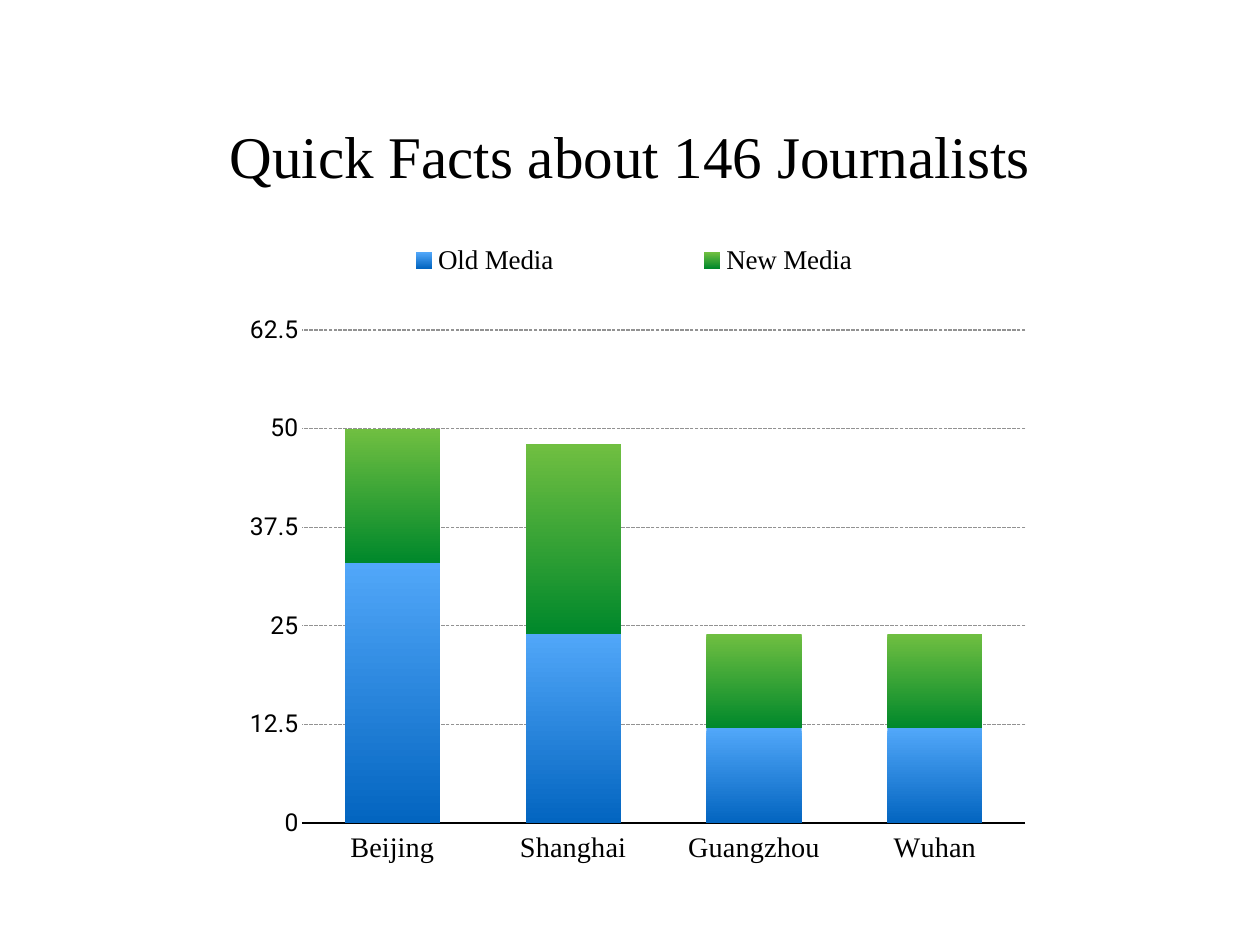
from dataclasses import dataclass

from lxml import etree
from pptx import Presentation
from pptx.chart.data import CategoryChartData
from pptx.dml.color import RGBColor
from pptx.enum.chart import XL_CHART_TYPE, XL_LEGEND_POSITION, XL_TICK_LABEL_POSITION, XL_TICK_MARK
from pptx.enum.dml import MSO_LINE
from pptx.enum.text import MSO_ANCHOR, PP_ALIGN
from pptx.oxml.ns import qn
from pptx.util import Cm, Pt

STACKED = XL_CHART_TYPE.COLUMN_STACKED
LEGEND_TOP = XL_LEGEND_POSITION.TOP
LABELS_LOW = XL_TICK_LABEL_POSITION.LOW
NO_TICK = XL_TICK_MARK.NONE
DOTTED = MSO_LINE.SQUARE_DOT
MIDDLE = MSO_ANCHOR.MIDDLE
CENTER = PP_ALIGN.CENTER


@dataclass(frozen=True)
class Theme:
    serif: str = "Times New Roman"
    sans: str = "Roboto"
    ink: str = "000000"
    grid: str = "929292"
    blue: tuple = ("51A7F9", "0365C0")
    green: tuple = ("70BF41", "00882B")
    title_size: int = 48
    category_size: int = 23
    legend_size: int = 22
    value_size: int = 20
    chart_size: int = 10


THEME = Theme()
CITIES = ("Beijing", "Shanghai", "Guangzhou", "Wuhan")
MEDIA = (
    ("Old Media", (33, 24, 12, 12), THEME.blue),
    ("New Media", (17, 24, 12, 12), THEME.green),
)


def set_font(font, name, size):
    font.name = name
    font.size = Pt(size)
    font.bold = False
    font.color.rgb = RGBColor.from_string(THEME.ink)


def set_line(line, color):
    line.color.rgb = RGBColor.from_string(color)
    line.width = Pt(1)


def set_gradient(fill, colors):
    fill.gradient()
    fill.gradient_angle = 270
    for stop, color, position in zip(fill.gradient_stops, colors, (0, 1)):
        stop.color.rgb = RGBColor.from_string(color)
        stop.position = position


def make_layout(x, y, w, h, inner=False):
    layout = etree.Element(qn("c:layout"))
    manual = etree.SubElement(layout, qn("c:manualLayout"))
    settings = [("layoutTarget", "inner")] if inner else []
    settings += [("xMode", "edge"), ("yMode", "edge")]
    settings += [("x", x), ("y", y), ("w", w), ("h", h)]
    for tag, value in settings:
        etree.SubElement(manual, qn(f"c:{tag}")).set("val", str(value))
    return layout


def place_chart_parts(chart):
    plot_area = chart.element.find(".//" + qn("c:plotArea"))
    for layout in plot_area.findall(qn("c:layout")):
        plot_area.remove(layout)
    plot_area.insert(0, make_layout(0.085, 0.144, 0.915, 0.773, inner=True))

    legend = chart.element.find(".//" + qn("c:legend"))
    for layout in legend.findall(qn("c:layout")):
        legend.remove(layout)
    legend.find(qn("c:legendPos")).addnext(make_layout(0.05, 0, 0.91, 0.07))


def add_title(page, text):
    box = page.shapes.add_textbox(Cm(2.64), Cm(1.24), Cm(30.84), Cm(6))
    frame = box.text_frame
    frame.word_wrap = True
    frame.vertical_anchor = MIDDLE
    frame.margin_left = frame.margin_right = 0
    frame.margin_top = frame.margin_bottom = 0
    para = frame.paragraphs[0]
    para.text = text
    para.alignment = CENTER
    para.line_spacing = 1.2
    set_font(para.font, THEME.serif, THEME.title_size)


def style_axes(chart):
    cities = chart.category_axis
    cities.tick_label_position = LABELS_LOW
    set_font(cities.tick_labels.font, THEME.serif, THEME.category_size)
    set_line(cities.format.line, THEME.ink)

    counts = chart.value_axis
    counts.minimum_scale = 0
    counts.maximum_scale = 62.5
    counts.major_unit = 12.5
    counts.has_major_gridlines = True
    gridlines = counts.major_gridlines.format.line
    set_line(gridlines, THEME.grid)
    gridlines.dash_style = DOTTED
    counts.tick_labels.number_format = "General"
    counts.tick_labels.number_format_is_linked = False
    set_font(counts.tick_labels.font, THEME.sans, THEME.value_size)
    counts.format.line.fill.background()

    for axis in (cities, counts):
        axis.major_tick_mark = NO_TICK
        axis.minor_tick_mark = NO_TICK


def add_media_chart(page):
    data = CategoryChartData()
    data.categories = CITIES
    for name, values, _ in MEDIA:
        data.add_series(name, values)
    chart = page.shapes.add_chart(
        STACKED, Cm(6.73), Cm(6.83), Cm(22.68), Cm(18.29), data
    ).chart
    chart.has_title = False
    set_font(chart.font, THEME.sans, THEME.chart_size)

    plot = chart.plots[0]
    plot.gap_width = 90
    plot.overlap = 100
    plot.vary_by_categories = False
    for series, (_, _, colors) in zip(plot.series, MEDIA):
        set_gradient(series.format.fill, colors)
        series.format.line.fill.background()

    style_axes(chart)
    chart.has_legend = True
    chart.legend.position = LEGEND_TOP
    chart.legend.include_in_layout = True
    set_font(chart.legend.font, THEME.serif, THEME.legend_size)
    place_chart_parts(chart)


def main():
    deck = Presentation()
    deck.slide_width = Cm(36.12)
    deck.slide_height = Cm(27.1)
    page = deck.slides.add_slide(deck.slide_layouts[6])
    add_title(page, "Quick Facts about 146 Journalists")
    add_media_chart(page)
    deck.save("out.pptx")


if __name__ == "__main__":
    main()
